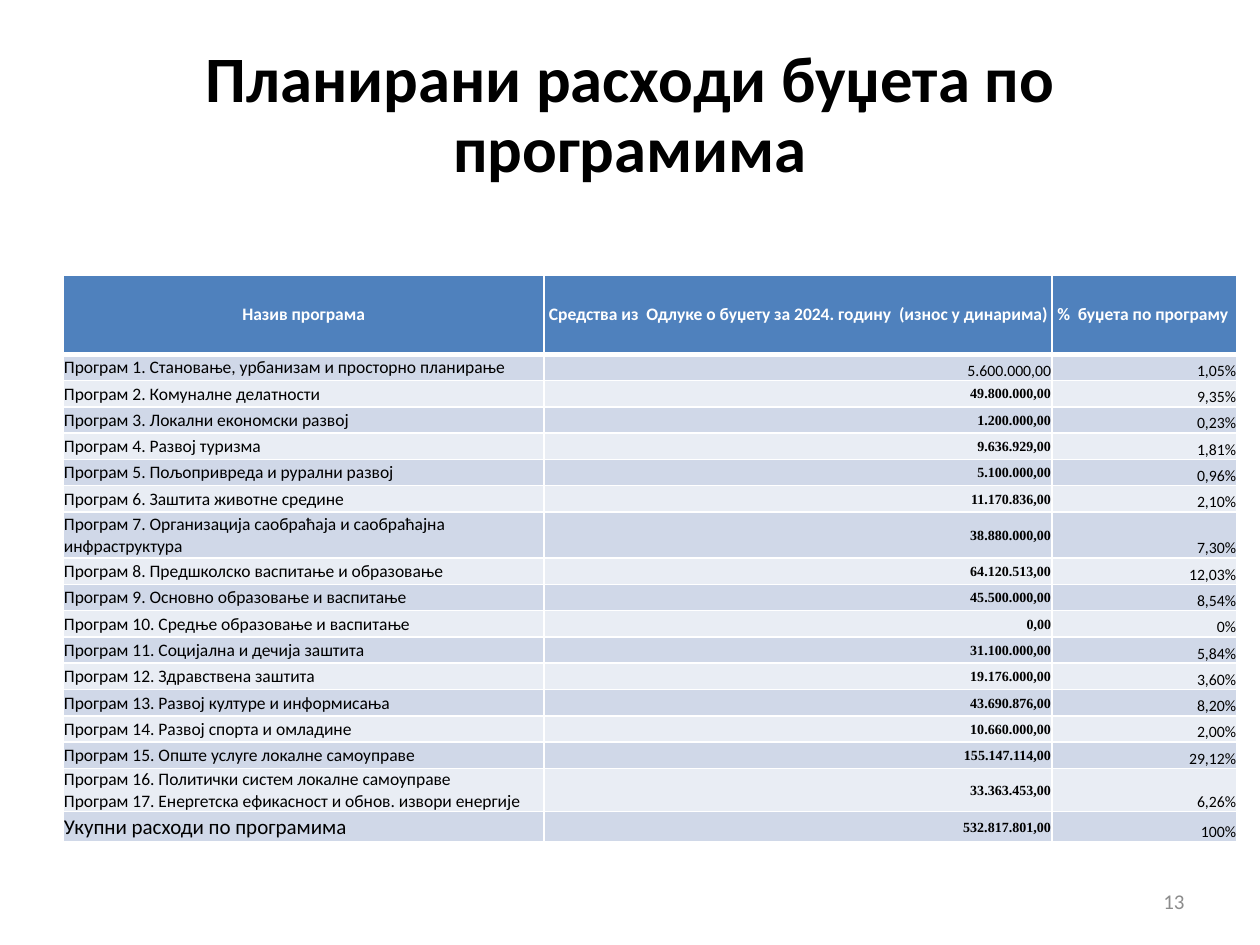
from lxml.etree import SubElement
from pptx import Presentation
from pptx.dml.color import RGBColor
from pptx.enum.text import MSO_ANCHOR as Anchor, MSO_AUTO_SIZE as AutoSize, PP_ALIGN as Align
from pptx.oxml.ns import qn
from pptx.util import Cm, Pt

PROGRAMS = [
    ("Програм 1. Становање, урбанизам и просторно планирање", "5.600.000,00", "1,05%"),
    ("Програм 2. Комуналне делатности", "49.800.000,00", "9,35%"),
    ("Програм 3. Локални економски развој", "1.200.000,00", "0,23%"),
    ("Програм 4. Развој туризма", "9.636.929,00", "1,81%"),
    ("Програм 5. Пољопривреда и рурални развој", "5.100.000,00", "0,96%"),
    ("Програм 6. Заштита животне средине", "11.170.836,00", "2,10%"),
    ("Програм 7. Организација саобраћаја и саобраћајна инфраструктура", "38.880.000,00", "7,30%"),
    ("Програм 8. Предшколско васпитање и образовање", "64.120.513,00", "12,03%"),
    ("Програм 9. Основно образовање и васпитање", "45.500.000,00", "8,54%"),
    ("Програм 10. Средње образовање и васпитање", "0,00", "0%"),
    ("Програм 11. Социјална и дечија заштита", "31.100.000,00", "5,84%"),
    ("Програм 12. Здравствена заштита", "19.176.000,00", "3,60%"),
    ("Програм 13. Развој културе и информисања", "43.690.876,00", "8,20%"),
    ("Програм 14. Развој спорта и омладине", "10.660.000,00", "2,00%"),
    ("Програм 15. Опште услуге локалне самоуправе", "155.147.114,00", "29,12%"),
    ("Програм 16. Политички систем локалне самоуправе\n"
     "Програм 17. Енергетска ефикасност и обнов. извори енергије", "33.363.453,00", "6,26%"),
    ("Укупни расходи по програмима", "532.817.801,00", "100%"),
]
HEADERS = ("Назив програма",
           "Средства из  Одлуке о буџету за 2024. годину  (износ у динарима)",
           "%  буџета по програму ")
COLUMN_WIDTHS = (9.7, 10.24, 3.73)
ROW_HEIGHT = 0.53
SPECIAL_HEIGHTS = {0: 1.6, 7: 0.93, 16: 0.87, 17: 0.61}
BANDS = ("E9EDF4", "D0D8E8")


def color(value):
    """Turn a hex string into a colour."""
    return RGBColor.from_string(value)


def add_run(p, text, size, hex_color="000000", bold=False, font="Calibri"):
    """Append a formatted run to a paragraph."""
    r = p.add_run()
    r.text = text
    r.font.name, r.font.size, r.font.bold = font, Pt(size), bold
    r.font.color.rgb = color(hex_color)


def add_border(cell, side, width):
    """Draw one white border of a cell."""
    ln = SubElement(cell._tc.get_or_add_tcPr(), qn(f"a:ln{side}"), w=str(Pt(width)))
    SubElement(SubElement(ln, qn("a:solidFill")), qn("a:srgbClr"), val="FFFFFF")


def fill_cell(cell, text, fill, align, anchor, **style):
    """Write and format the text and background of a cell."""
    cell.fill.solid()
    cell.fill.fore_color.rgb = color(fill)
    cell.margin_left = cell.margin_right = cell.margin_top = Cm(0.02)
    cell.margin_bottom = 0
    cell.vertical_anchor = anchor
    tf = cell.text_frame
    for i, line in enumerate(text.split("\n")):
        p = tf.add_paragraph() if i else tf.paragraphs[0]
        p.alignment = align
        add_run(p, line, **style)


def add_title(s, text):
    """Place and format the slide title."""
    sp = s.shapes.title
    sp.left, sp.top, sp.width, sp.height = Cm(1.27), Cm(0.76), Cm(22.86), Cm(3.18)
    tf = sp.text_frame
    tf.auto_size = AutoSize.NONE
    tf.vertical_anchor = Anchor.MIDDLE
    p = tf.paragraphs[0]
    p.alignment, p.line_spacing = Align.CENTER, 0.9
    add_run(p, text, 37, bold=True)


def add_page_number(s, text):
    """Add the page number at the bottom right."""
    tf = s.shapes.add_textbox(Cm(18.2), Cm(17.65), Cm(5.93), Cm(1.02)).text_frame
    tf.word_wrap = True
    tf.vertical_anchor = Anchor.MIDDLE
    p = tf.paragraphs[0]
    p.alignment = Align.RIGHT
    add_run(p, text, 12, "8C8C8C")


def fill_program_row(cells, row, values):
    """Fill one program row: name, amount and share."""
    name, amount, share = values
    fill = BANDS[row % 2]
    small = {"size": 9}
    is_first, is_total = row == 1, row == len(PROGRAMS)
    amount_style = small if is_first else {"size": 8, "bold": True, "font": "Times New Roman"}
    amount_anchor = Anchor.BOTTOM if is_first else Anchor.MIDDLE
    fill_cell(cells[0], name, fill, Align.LEFT, Anchor.MIDDLE, size=12 if is_total else 10)
    fill_cell(cells[1], amount, fill, Align.RIGHT, amount_anchor, **amount_style)
    fill_cell(cells[2], share, fill, Align.RIGHT, Anchor.BOTTOM, **small)


def add_budget_table(s):
    """Add the table of planned expenditure by program."""
    heights = [SPECIAL_HEIGHTS.get(i, ROW_HEIGHT) for i in range(len(PROGRAMS) + 1)]
    table = s.shapes.add_table(len(heights), len(HEADERS), Cm(1.27), Cm(5.54),
                               Cm(sum(COLUMN_WIDTHS)), Cm(sum(heights))).table
    for column, width in zip(table.columns, COLUMN_WIDTHS):
        column.width = Cm(width)
    for i, (row, height) in enumerate(zip(table.rows, heights)):
        row.height = Cm(height)
        for cell in row.cells:
            for side in "LRTB":
                add_border(cell, side, 3 if (i, side) in ((0, "B"), (1, "T")) else 1)
    for cell, text in zip(table.rows[0].cells, HEADERS):
        fill_cell(cell, text, "4F81BD", Align.CENTER, Anchor.MIDDLE,
                  size=10, hex_color="FFFFFF", bold=True)
    for i, values in enumerate(PROGRAMS, 1):
        fill_program_row(list(table.rows[i].cells), i, values)


def main():
    """Build the slide and save it."""
    prs = Presentation()
    prs.slide_width, prs.slide_height = Cm(25.4), Cm(19.05)
    s = prs.slides.add_slide(prs.slide_layouts[5])
    add_title(s, "Планирани расходи буџета по програмима")
    add_page_number(s, "13")
    add_budget_table(s)
    prs.save("out.pptx")


if __name__ == "__main__":
    main()
